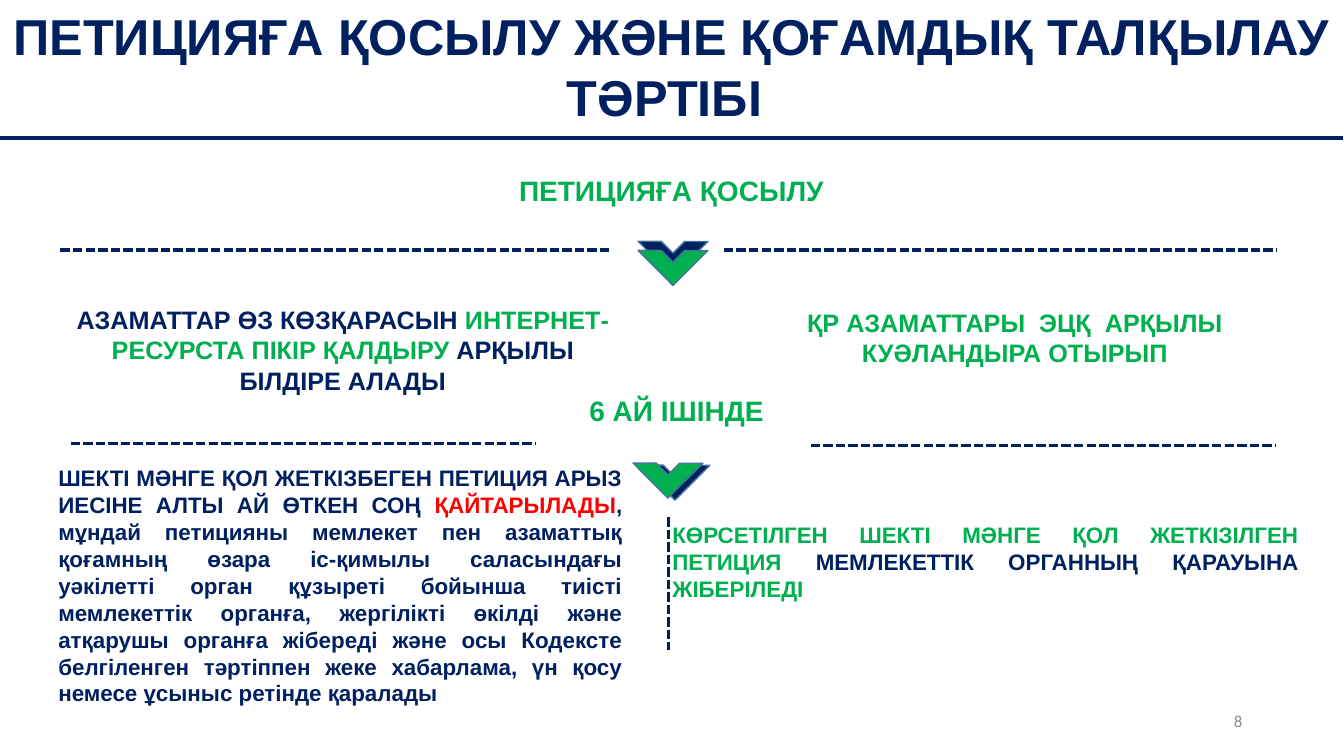
"""Builds the slide on joining a petition and public discussion."""
from lxml import etree
from pptx import Presentation
from pptx.dml.color import RGBColor
from pptx.enum import dml, shapes, text
from pptx.oxml import ns
from pptx.util import Inches, Pt

NAVY = RGBColor(0x00, 0x20, 0x60)
GREEN = RGBColor(0x00, 0xB0, 0x50)
RED = RGBColor(0xFF, 0x00, 0x00)
GRAY = RGBColor(0x8C, 0x8C, 0x8C)
OUTLINE = RGBColor(0x43, 0x73, 0x9E)

CENTER, JUSTIFY, RIGHT = text.PP_ALIGN.CENTER, text.PP_ALIGN.JUSTIFY, text.PP_ALIGN.RIGHT

TITLE = "ПЕТИЦИЯҒА ҚОСЫЛУ ЖӘНЕ ҚОҒАМДЫҚ ТАЛҚЫЛАУ ТӘРТІБІ "
JOINING = [("ПЕТИЦИЯҒА ҚОСЫЛУ", GREEN)]
OPINION = [
    ("АЗАМАТТАР ӨЗ КӨЗҚАРАСЫН ", NAVY),
    ("ИНТЕРНЕТ-РЕСУРСТА ПІКІР ҚАЛДЫРУ", GREEN),
    (" АРҚЫЛЫ БІЛДІРЕ АЛАДЫ", NAVY),
]
SIGNATURE = [("ҚР АЗАМАТТАРЫ  ЭЦҚ  АРҚЫЛЫ КУӘЛАНДЫРА ОТЫРЫП", GREEN)]
DEADLINE = [("6 АЙ ІШІНДЕ", GREEN)]
RETURNED = [
    ("ШЕКТІ МӘНГЕ ҚОЛ ЖЕТКІЗБЕГЕН ПЕТИЦИЯ АРЫЗ ИЕСІНЕ АЛТЫ АЙ ӨТКЕН СОҢ ", NAVY),
    ("ҚАЙТАРЫЛАДЫ", RED),
    (", мұндай петицияны мемлекет пен азаматтық қоғамның өзара іс-қимылы "
     "саласындағы уәкілетті орган құзыреті бойынша тиісті мемлекеттік органға, "
     "жергiлiктi өкiлдi және атқарушы органға жібереді және осы Кодексте "
     "белгіленген тәртіппен жеке хабарлама, үн қосу немесе ұсыныс ретінде "
     "қаралады", NAVY),
]
REVIEWED = [
    ("КӨРСЕТІЛГЕН ШЕКТІ МӘНГЕ ҚОЛ ЖЕТКІЗІЛГЕН ПЕТИЦИЯ ", GREEN),
    ("МЕМЛЕКЕТТІК ОРГАННЫҢ ҚАРАУЫНА ", NAVY),
    ("ЖІБЕРІЛЕДІ", GREEN),
]


def set_title(slide, wording):
    """Place and format the slide title."""
    title = slide.shapes.title
    title.left, title.top = Inches(0), Inches(0)
    title.width, title.height = Inches(13.32), Inches(1.31)
    frame = title.text_frame
    frame.text = wording
    frame.auto_size = text.MSO_AUTO_SIZE.NONE
    frame.vertical_anchor = text.MSO_ANCHOR.MIDDLE
    heading = frame.paragraphs[0]
    heading.alignment = CENTER
    heading.font.name, heading.font.size, heading.font.bold = "Arial", Pt(36), True
    heading.font.color.rgb = NAVY


def add_text(slide, box, parts, size, align=CENTER, font="Arial", bold=True):
    """Add one paragraph made of (wording, colour) parts."""
    frame = slide.shapes.add_textbox(*map(Inches, box)).text_frame
    frame.word_wrap = True
    paragraph = frame.paragraphs[0]
    paragraph.alignment = align
    paragraph.font.name, paragraph.font.size, paragraph.font.bold = font, Pt(size), bold
    for wording, color in parts:
        run = paragraph.add_run()
        run.text = wording
        run.font.color.rgb = color
    return frame


def add_line(slide, start, end, dashed=True):
    """Add a navy line, dashed unless told otherwise."""
    rule = slide.shapes.add_connector(
        shapes.MSO_CONNECTOR.STRAIGHT, *map(Inches, start + end))
    rule.line.color.rgb = NAVY
    rule.line.width = Pt(2.25)
    if dashed:
        rule.line.dash_style = dml.MSO_LINE.SQUARE_DOT
    etree.SubElement(rule._element.spPr, ns.qn("a:effectLst"))


def add_chevron(slide, left, top, color):
    """Add a half frame turned to point down."""
    side = Inches(0.49)
    chevron = slide.shapes.add_shape(
        shapes.MSO_SHAPE.HALF_FRAME, Inches(left), Inches(top), side, side)
    chevron.rotation = 225.2
    chevron.shadow.inherit = False
    chevron.fill.solid()
    chevron.fill.fore_color.rgb = color
    chevron.line.color.rgb = OUTLINE
    chevron.line.width = Pt(1)


def main():
    """Build and save the slide."""
    deck = Presentation()
    deck.slide_width, deck.slide_height = Inches(13.33), Inches(7.5)
    slide = deck.slides.add_slide(deck.slide_layouts[5])

    set_title(slide, TITLE)
    add_line(slide, (0, 1.37), (13.32, 1.37), dashed=False)

    for left, top, color in ((6.43, 2.15, NAVY), (6.43, 2.24, GREEN),
                             (6.45, 4.37, NAVY), (6.38, 4.35, GREEN)):
        add_chevron(slide, left, top, color)

    add_text(slide, (3.08, 1.67, 7.16, 0.44), JOINING, 20)
    add_text(slide, (0.66, 2.97, 5.48, 1.01), OPINION, 18)
    add_text(slide, (7.12, 3, 5.89, 0.71), SIGNATURE, 18)
    add_text(slide, (5.27, 3.85, 2.88, 0.44), DEADLINE, 20)
    add_text(slide, (0.48, 4.56, 5.79, 2.52), RETURNED, 16, JUSTIFY)
    add_text(slide, (6.57, 5.12, 6.41, 0.91), REVIEWED, 16, JUSTIFY)

    for left, right, y in ((0.6, 6.07, 2.48), (7.18, 12.66, 2.48),
                           (0.7, 5.31, 4.4), (8.04, 12.66, 4.42)):
        add_line(slide, (left, y), (right, y))
    add_line(slide, (6.63, 5.13), (6.63, 6.45))

    page_number = add_text(slide, (9.42, 6.95, 3, 0.4), [("8", GRAY)], 12,
                           RIGHT, "Calibri", False)
    page_number.vertical_anchor = text.MSO_ANCHOR.MIDDLE

    deck.save("out.pptx")


if __name__ == "__main__":
    main()
